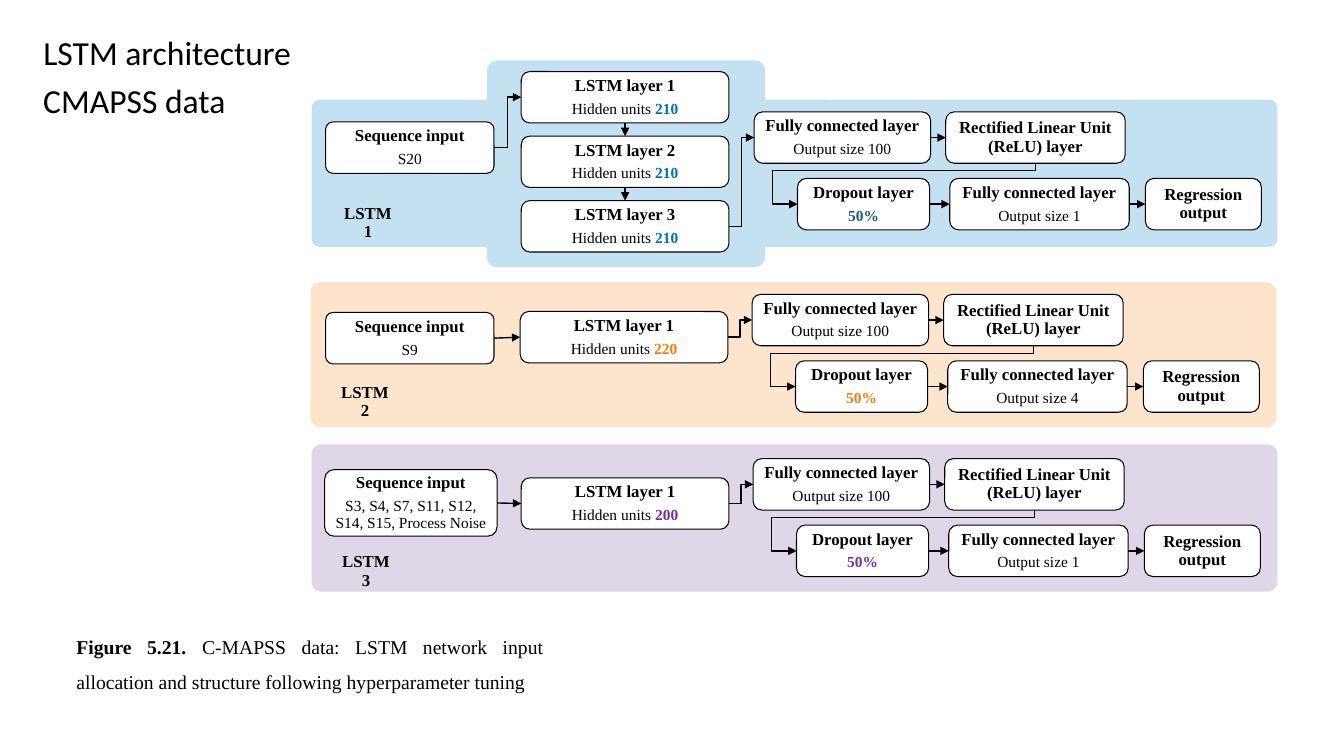
from lxml import etree
from pptx import Presentation
from pptx.dml.color import RGBColor
from pptx.enum.shapes import MSO_CONNECTOR as Connector, MSO_SHAPE as Shape
from pptx.enum.text import MSO_ANCHOR as Anchor, MSO_AUTO_SIZE as AutoSize, PP_ALIGN as Align
from pptx.oxml.ns import qn
from pptx.util import Pt

PX = 9144  # EMU, 100 px to the inch
SERIF, SANS = "Times New Roman", "Calibri"
BLACK, WHITE = "000000", "FFFFFF"

HEADINGS = [("LSTM architecture", (33, 27, 301, 50)), ("CMAPSS data", (33, 74, 301, 50))]
CAPTION = [("Figure 5.21. ", True),
           ("C-MAPSS data: LSTM network input allocation and structure following hyperparameter tuning", False)]
CAPTION_BOX = (66, 613, 483, 77)

# Panels are (left, top, width, height, corner); tail is the top left of the first dense layer
NETWORKS = [
    {"name": "LSTM 1", "label": (326, 208), "fill": "C4E1F2", "accent": "0070C0", "dropout": "1B587C",
     "panels": [(309, 99, 958, 146, .055), (483, 60, 276, 205, .049)],
     "inputs": "S20", "input_box": (323, 121, 167, 51), "units": "210",
     "layers": [(517, 71), (517, 135), (517, 199)], "tail": (748, 111), "outputs": "1"},
    {"name": "LSTM 2", "label": (323, 386), "fill": "FDE5CD", "accent": "F07F09", "dropout": "F07F09",
     "panels": [(308, 280, 958, 144, .074)],
     "inputs": "S9", "input_box": (323, 310, 167, 51), "units": "220",
     "layers": [(516, 309)], "tail": (746, 292), "outputs": "4"},
    {"name": "LSTM 3", "label": (324, 554), "fill": "DFD7E7", "accent": "7030A0", "dropout": "7030A0",
     "panels": [(309, 441, 958, 146, .063)],
     "inputs": "S3, S4, S7, S11, S12, S14, S15, Process Noise", "input_box": (322, 466, 171, 66), "units": "200",
     "layers": [(517, 474)], "tail": (747, 455), "outputs": "1"},
]
LAYER_SIZE, LABEL_SIZE = (206, 51), (78, 26)
BOX_HEIGHT, SECOND_ROW = 51, 66
TOP, LEFT, BOTTOM, RIGHT = range(4)  # connection sites of a rounded rectangle
RETURN_BEND = (18400, 110600)


def px(*lengths):
    return [length * PX for length in lengths]


def color(value):
    return RGBColor.from_string(value)


def apply(target, formats):
    for name, value in formats.items():
        setattr(target, name, value)


def add_run(paragraph, text, size, bold=False, ink=BLACK, font=SERIF):
    run = paragraph.add_run()
    run.text = text
    apply(run.font, {"name": font, "size": Pt(size), "bold": bold})
    run.font.color.rgb = color(ink)


def add_rounded(slide, box, corner=None, fill=None, outlined=False):
    shape = slide.shapes.add_shape(Shape.ROUNDED_RECTANGLE, *px(*box))
    shape.shadow.inherit = False
    if corner is not None:
        shape.adjustments[0] = corner
    if fill:
        shape.fill.solid()
        shape.fill.fore_color.rgb = color(fill)
    else:
        shape.fill.background()
    if outlined:
        shape.line.color.rgb = color(BLACK)
        shape.line.width = Pt(0.75)
    else:
        shape.line.fill.background()
    return shape


def write_lines(shape, title, details=()):
    """Write a bold title and, below it, detail runs of (text, bold, ink)."""
    frame = shape.text_frame
    apply(frame, {"word_wrap": True, "vertical_anchor": Anchor.MIDDLE, "margin_left": 8 * PX,
                  "margin_right": 8 * PX, "margin_top": 4 * PX, "margin_bottom": 4 * PX})
    paragraphs = [frame.paragraphs[0]] + ([frame.add_paragraph()] if details else [])
    for paragraph in paragraphs:
        apply(paragraph, {"alignment": Align.CENTER, "line_spacing": 0.9, "space_after": Pt(4)})
    add_run(paragraphs[0], title, 12, True)
    for text, bold, ink in details:
        add_run(paragraphs[-1], text, 11, bold, ink)


def add_block(slide, box, title, *details, corner=None):
    shape = add_rounded(slide, box, corner, WHITE, outlined=True)
    write_lines(shape, title, details)
    return shape


def add_arrow(slide, start, end, kind=Connector.STRAIGHT, sites=(RIGHT, LEFT)):
    arrow = slide.shapes.add_connector(kind, 0, 0, 0, 0)
    arrow.begin_connect(start, sites[0])
    arrow.end_connect(end, sites[1])
    arrow.line.color.rgb = color(BLACK)
    arrow.line.width = Pt(1)
    etree.SubElement(arrow.line._get_or_add_ln(), qn("a:tailEnd"), type="triangle")
    etree.SubElement(arrow._element.spPr, qn("a:effectLst"))
    return arrow


def add_return_arrow(slide, start, end):
    """Lead from the bottom of start back to the left side of end in four legs."""
    arrow = add_arrow(slide, start, end, Connector.ELBOW, (BOTTOM, LEFT))
    across, down = arrow.width, arrow.height
    center_x, center_y = arrow.left + across // 2, arrow.top + down // 2
    transform = arrow._element.spPr.find(qn("a:xfrm"))
    for flip in ("flipH", "flipV"):
        transform.attrib.pop(flip, None)
    transform.set("rot", str(90 * 60000))
    apply(arrow, {"left": center_x - down // 2, "top": center_y - across // 2, "width": down, "height": across})
    geometry = arrow._element.spPr.find(qn("a:prstGeom"))
    geometry.set("prst", "bentConnector4")
    guides = geometry.find(qn("a:avLst"))
    for number, value in enumerate(RETURN_BEND, 1):
        etree.SubElement(guides, qn("a:gd"), name=f"adj{number}", fmla=f"val {value}")


def draw_network(slide, network):
    for *box, corner in network["panels"]:
        add_rounded(slide, box, corner, network["fill"])
    write_lines(add_rounded(slide, network["label"] + LABEL_SIZE), network["name"])

    source = add_block(slide, network["input_box"], "Sequence input", (network["inputs"], False, BLACK), corner=.139)
    layers = [add_block(slide, place + LAYER_SIZE, f"LSTM layer {number}", ("Hidden units ", False, BLACK),
                        (network["units"], True, network["accent"]))
              for number, place in enumerate(network["layers"], 1)]

    left, top = network["tail"]
    tail = [
        (0, 0, 175, "Fully connected layer", ("Output size 100", False, BLACK)),
        (190, 0, 178, "Rectified Linear Unit (ReLU) layer"),
        (43, SECOND_ROW, 131, "Dropout layer", ("50%", True, network["dropout"])),
        (194, SECOND_ROW, 178, "Fully connected layer", (f"Output size {network['outputs']}", False, BLACK)),
        (388, SECOND_ROW, 115, "Regression output"),
    ]
    dense, relu, dropout, output, regression = [
        add_block(slide, (left + x, top + y, width, BOX_HEIGHT), *text) for x, y, width, *text in tail]

    add_arrow(slide, source, layers[0], Connector.ELBOW if len(layers) > 1 else Connector.STRAIGHT)
    for upper, lower in zip(layers, layers[1:]):
        add_arrow(slide, upper, lower, sites=(BOTTOM, TOP))
    add_arrow(slide, layers[-1], dense, Connector.ELBOW)
    add_return_arrow(slide, relu, dropout)
    for start, end in ((dense, relu), (dropout, output), (output, regression)):
        add_arrow(slide, start, end)


def place_text(shape, box):
    apply(shape, dict(zip(("left", "top", "width", "height"), px(*box))))
    apply(shape.text_frame, {"word_wrap": True, "auto_size": AutoSize.NONE, "vertical_anchor": Anchor.TOP})
    return shape.text_frame.paragraphs[0]


def main():
    presentation = Presentation()
    presentation.slide_width, presentation.slide_height = px(1333, 750)
    slide = presentation.slides.add_slide(presentation.slide_layouts[5])

    for network in NETWORKS:
        draw_network(slide, network)

    second_heading = slide.shapes.add_textbox(0, 0, 0, 0)
    for shape, (text, box) in zip((slide.shapes.title, second_heading), HEADINGS):
        paragraph = place_text(shape, box)
        paragraph.alignment = Align.LEFT
        add_run(paragraph, text, 24, font=SANS)

    caption = place_text(slide.shapes.add_textbox(0, 0, 0, 0), CAPTION_BOX)
    apply(caption, {"alignment": Align.JUSTIFY, "line_spacing": 1.5, "space_before": Pt(9), "space_after": Pt(6)})
    for text, bold in CAPTION:
        add_run(caption, text, 14, bold)

    presentation.save("out.pptx")


if __name__ == "__main__":
    main()
